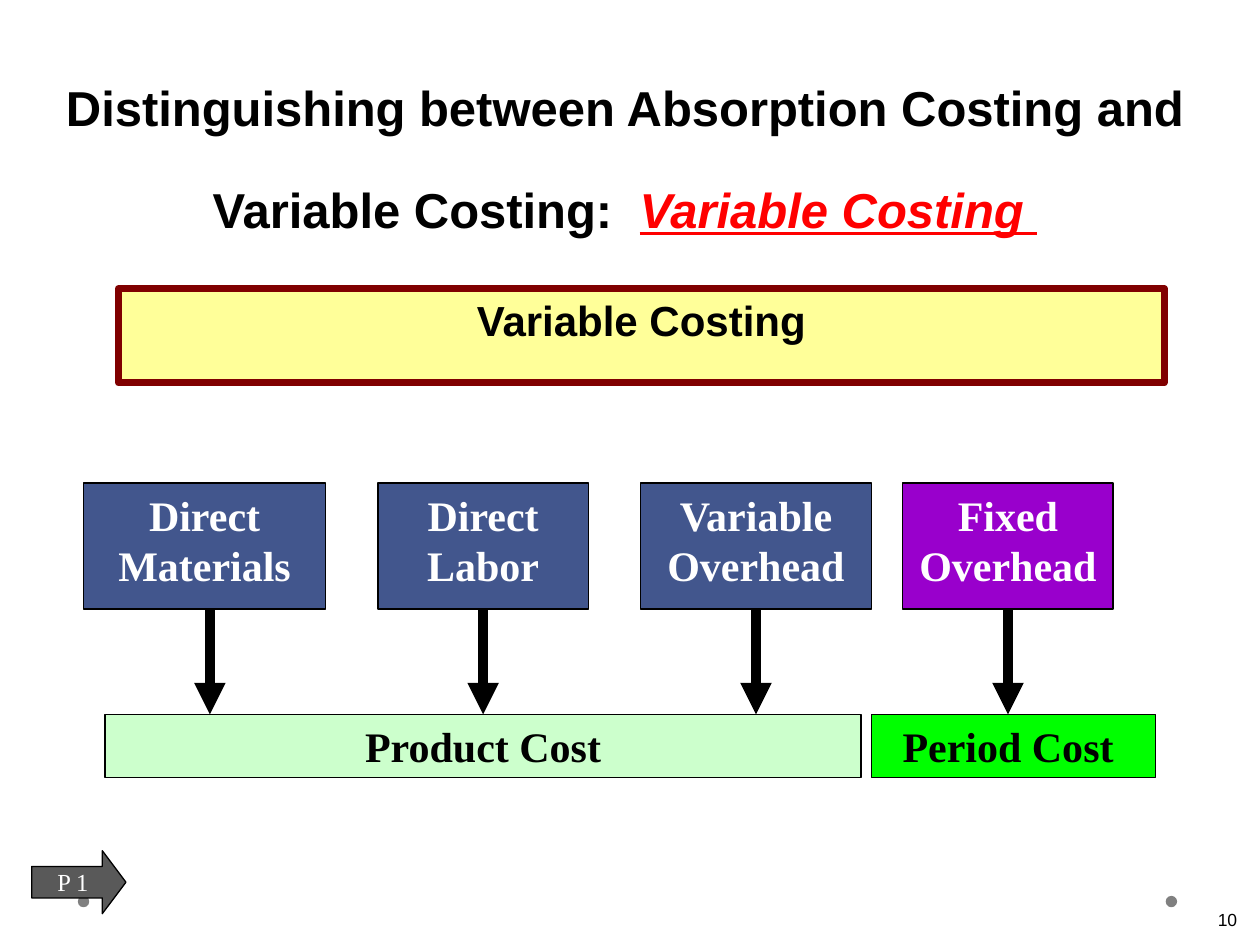
from lxml.etree import SubElement
from pptx import Presentation
from pptx.dml.color import RGBColor
from pptx.enum.shapes import MSO_CONNECTOR as Connector, MSO_SHAPE as Shape
from pptx.enum.text import MSO_ANCHOR as Anchor, PP_ALIGN as Align
from pptx.oxml.ns import qn
from pptx.util import Cm, Pt

SERIF, SANS = "Times New Roman", "Arial"
BLACK, WHITE, BLUE = "000000", "FFFFFF", "42568D"
BOX_TOP, BOX_HEIGHT = 9.74, 2.54
ARROW_TOP, COST_TOP = 11.85, 14.4


def color(hex_value):
    return RGBColor.from_string(hex_value)


def style(paragraph, size, hex_value, font=SERIF, bold=True, align=Align.CENTER):
    paragraph.alignment = align
    paragraph.font.name = font
    paragraph.font.size = Pt(size)
    paragraph.font.bold = bold
    paragraph.font.color.rgb = color(hex_value)


def add_block(slide, kind, place, fill, line=None, width=0.75):
    block = slide.shapes.add_shape(kind, *map(Cm, place))
    block.shadow.inherit = False
    block.fill.solid()
    block.fill.fore_color.rgb = color(fill)
    if line:
        block.line.color.rgb = color(line)
        block.line.width = Pt(width)
    else:
        block.line.fill.background()
    return block


def add_label_box(slide, text, place, fill, ink, font=SERIF, line=BLACK, width=0.75):
    box = add_block(slide, Shape.RECTANGLE, place, fill, line, width)
    box.text_frame.vertical_anchor = Anchor.TOP
    box.text_frame.text = text
    style(box.text_frame.paragraphs[0], 24, ink, font)
    return box


def add_arrow(slide, x, target=None):
    arrow = slide.shapes.add_connector(
        Connector.STRAIGHT, Cm(x), Cm(ARROW_TOP), Cm(x), Cm(COST_TOP))
    if target is not None:
        arrow.end_connect(target, 0)
    arrow.line.color.rgb = color(BLACK)
    arrow.line.width = Pt(6)
    SubElement(arrow.line._get_or_add_ln(), qn("a:tailEnd"), type="triangle")
    SubElement(arrow._element.spPr, qn("a:effectLst"))


def add_text(slide, place):
    frame = slide.shapes.add_textbox(*map(Cm, place)).text_frame
    frame.word_wrap = True
    return frame


def add_title(slide):
    frame = add_text(slide, (0, 1.7, 25.2, 5.28))
    frame.vertical_anchor = Anchor.BOTTOM
    frame.margin_bottom = Cm(2.18)
    title = frame.paragraphs[0]
    title.line_spacing = Pt(58)
    style(title, 28, BLACK, SANS)
    title.add_run().text = (
        "Distinguishing between Absorption Costing and Variable Costing:  ")
    method = title.add_run()
    method.text = "Variable Costing "
    method.font.italic = method.font.underline = True
    method.font.color.rgb = color("FF0000")


def add_marker(slide):
    marker = add_block(slide, Shape.RIGHT_ARROW, (0.64, 17.15, 1.9, 1.27),
                       "595959", BLACK)
    marker.adjustments[0] = 0.5
    marker.adjustments[1] = 0.375
    frame = marker.text_frame
    frame.word_wrap = False
    frame.vertical_anchor = Anchor.MIDDLE
    frame.text = "P 1"
    style(frame.paragraphs[0], 14, WHITE, bold=False)


def main():
    prs = Presentation()
    prs.slide_width, prs.slide_height = Cm(25.4), Cm(19.05)
    slide = prs.slides.add_slide(prs.slide_layouts[6])

    # Footer dots
    for x in (23.5, 1.57):
        add_block(slide, Shape.OVAL, (x, 18.06, 0.23, 0.23), "808080")

    # Title and heading banner
    add_title(slide)
    add_label_box(slide, "Variable Costing", (2.39, 5.82, 21.08, 1.9),
                  "FFFF99", BLACK, SANS, "800000", 4)

    # Cost categories
    product = add_label_box(slide, "Product Cost", (2.12, COST_TOP, 15.24, 1.27),
                            "CCFFCC", BLACK)
    add_label_box(slide, "Period Cost ", (17.57, COST_TOP, 5.72, 1.27),
                  "00FF00", BLACK)

    # Cost components, each with its arrow running out from behind the box
    components = [
        ("Direct Materials", 1.69, 4.87, BLUE, 4.23, None),
        ("Direct Labor", 7.62, 4.24, BLUE, 9.74, product),
        ("Variable Overhead", 12.91, 4.66, BLUE, 15.24, None),
        ("Fixed Overhead", 18.2, 4.24, "9900CC", 20.32, None),
    ]
    for name, left, width, fill, arrow_x, target in components:
        add_arrow(slide, arrow_x, target)
        add_label_box(slide, name, (left, BOX_TOP, width, BOX_HEIGHT), fill, WHITE)

    # Page number and objective marker
    page = add_text(slide, (23.71, 18.2, 1.48, 0.64))
    page.text = "10"
    style(page.paragraphs[0], 10, BLACK, SANS, False, Align.RIGHT)
    add_marker(slide)

    prs.save("out.pptx")


if __name__ == "__main__":
    main()
